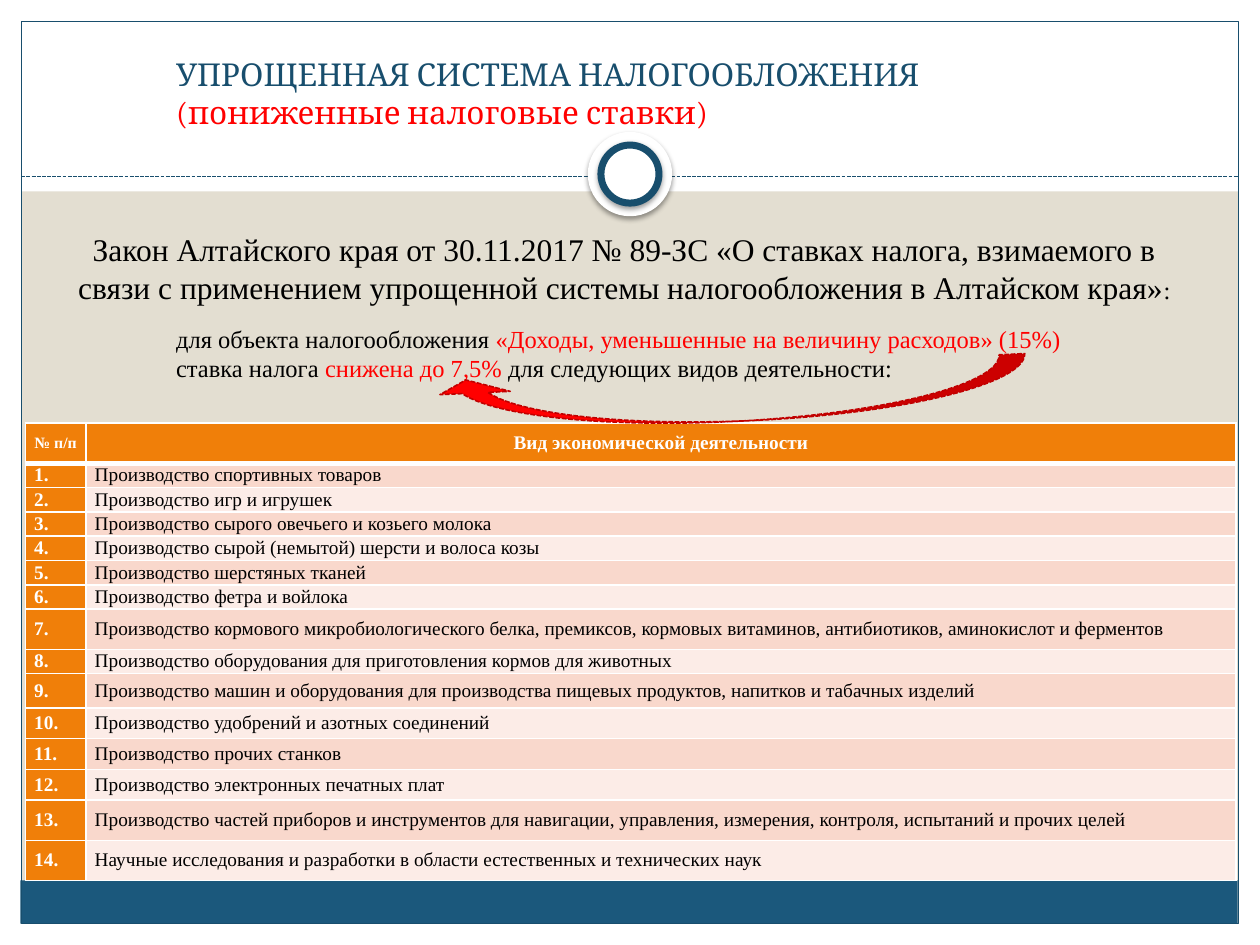
import pptx
import pptx.util
import pptx.dml.color
import pptx.enum.dml
import pptx.enum.shapes
import pptx.enum.text
import pptx.oxml
import pptx.oxml.ns

Cm, Pt = pptx.util.Cm, pptx.util.Pt
KIND = pptx.enum.shapes.MSO_SHAPE
ALIGN = pptx.enum.text.PP_ALIGN
ANCHOR = pptx.enum.text.MSO_ANCHOR
DASH = pptx.enum.dml.MSO_LINE.SQUARE_DOT
RGB = pptx.dml.color.RGBColor.from_string
NS = pptx.oxml.ns.nsdecls("a")


class Theme:
    sand, white, black = "E3DED1", "FFFFFF", "000000"
    navy, foot = "184E6D", "1B587C"
    red, rim = "FF0000", "C00000"
    orange, bands = "F07F09", ("F9D8CC", "FCECE7")
    serif, roman = "Cambria", "Times New Roman"
    big, mid, cell, small = 18, 14, 11, 9


def shape(kind, box, fill=None, line=None, width=0.75):
    item = slide.shapes.add_shape(kind, *map(Cm, box))
    item.shadow.inherit = False
    if fill:
        item.fill.solid()
        item.fill.fore_color.rgb = RGB(fill)
    else:
        item.fill.background()
    if line:
        item.line.color.rgb = RGB(line)
        item.line.width = Pt(width)
    else:
        item.line.fill.background()
    return item


def write(frame, lines, font, align=ALIGN.LEFT, bold=False):
    """Fill a text frame; each line is a list of (text, size, colour) runs."""
    frame.word_wrap = True
    for i, line in enumerate(lines):
        para = frame.add_paragraph() if i else frame.paragraphs[0]
        para.alignment = align
        for text, size, tint in line:
            run = para.add_run()
            run.text = text
            run.font.name, run.font.size, run.font.bold = font, Pt(size), bold
            run.font.color.rgb = RGB(tint)


deck = pptx.Presentation()
deck.slide_width, deck.slide_height = Cm(25.4), Cm(19.05)
slide = deck.slides.add_slide(deck.slide_layouts[6])
slide.background.fill.solid()
slide.background.fill.fore_color.rgb = RGB(Theme.sand)

# White margins, footer band and frame
for box in ((0, 18.62, 25.4, 0.43), (0, 0, 25.4, 3.86),
            (0, 0, 0.43, 19.05), (24.97, 0, 0.43, 19.05)):
    shape(KIND.RECTANGLE, box, Theme.white)
shape(KIND.RECTANGLE, (0.41, 17.75, 24.54, 0.87), Theme.foot)
shape(KIND.RECTANGLE, (0.43, 0.43, 24.54, 18.19), line=Theme.navy)

rule = slide.shapes.add_connector(
    pptx.enum.shapes.MSO_CONNECTOR.STRAIGHT, Cm(0.43), Cm(3.56), Cm(24.97), Cm(3.56))
rule.line.color.rgb = RGB(Theme.navy)
rule.line.width = Pt(0.75)
rule.line.dash_style = DASH
rule._element.spPr.append(pptx.oxml.parse_xml(f"<a:effectLst {NS}/>"))

# Ring on the rule
for size, edge in ((1.7, None), (1.17, Theme.navy)):
    disc = shape(KIND.OVAL, (12.7 - size / 2, 3.51 - size / 2, size, size),
                 Theme.white, edge, 4)
    glow = disc._element.spPr.find(pptx.oxml.ns.qn("a:effectLst"))
    glow.append(pptx.oxml.parse_xml(
        f'<a:outerShdw {NS} blurRad="{Pt(3.1)}" dist="{Pt(1.6)}" dir="5400000">'
        f'<a:srgbClr val="{Theme.black}"><a:alpha val="38000"/></a:srgbClr>'
        '</a:outerShdw>'))

# Title and introduction
title = slide.shapes.add_textbox(Cm(3.3), Cm(0.91), Cm(21), Cm(2.21)).text_frame
title.margin_top = Cm(0.2)
write(title, [
    [("УПРОЩЕННАЯ СИСТЕМА НАЛОГООБЛОЖЕНИЯ", Theme.big, Theme.navy)],
    [("(пониженные налоговые ставки)", Theme.big, Theme.red)],
], Theme.serif)

law = slide.shapes.add_textbox(Cm(0.89), Cm(4.52), Cm(23.39), Cm(1.8))
write(law.text_frame, [[
    ("Закон Алтайского края от 30.11.2017 № 89-ЗС «О ставках налога, взимаемого в "
     "связи с применением упрощенной системы налогообложения в Алтайском края»",
     Theme.big, Theme.black),
    (":", Theme.mid, Theme.black),
]], Theme.roman, ALIGN.CENTER)

rate = slide.shapes.add_textbox(Cm(3.3), Cm(6.4), Cm(19.81), Cm(1.45))
write(rate.text_frame, [
    [("для объекта налогообложения ", Theme.mid, Theme.black),
     ("«Доходы, уменьшенные на величину расходов» (15%)", Theme.mid, Theme.red)],
    [("ставка налога ", Theme.mid, Theme.black),
     ("снижена до 7,5%", Theme.mid, Theme.red),
     (" для следующих видов деятельности:", Theme.mid, Theme.black)],
], Theme.roman)

# Table of activities with row heights
head = 0.81
works = [
    ("Производство спортивных товаров", 0.49),
    ("Производство игр и игрушек", 0.49),
    ("Производство сырого овечьего и козьего молока", 0.49),
    ("Производство сырой (немытой) шерсти и волоса козы", 0.49),
    ("Производство шерстяных тканей", 0.49),
    ("Производство фетра и войлока", 0.49),
    ("Производство кормового микробиологического белка, премиксов, кормовых "
     "витаминов, антибиотиков, аминокислот и ферментов", 0.81),
    ("Производство оборудования для приготовления кормов для животных", 0.49),
    ("Производство машин и оборудования для производства пищевых продуктов, "
     "напитков и табачных изделий", 0.69),
    ("Производство удобрений и азотных соединений", 0.62),
    ("Производство прочих станков", 0.62),
    ("Производство электронных печатных плат", 0.62),
    ("Производство частей приборов и инструментов для навигации, управления, "
     "измерения, контроля, испытаний и прочих целей", 0.81),
    ("Научные исследования и разработки в области естественных и технических наук",
     0.81),
]
rows = [("№ п/п", "Вид экономической деятельности", head)]
rows += [(f"{n}.", work, tall) for n, (work, tall) in enumerate(works, 1)]
table = slide.shapes.add_table(
    len(rows), 2, Cm(0.51), Cm(8.53), Cm(24.41), Cm(sum(r[2] for r in rows))).table
table.columns[0].width, table.columns[1].width = Cm(1.22), Cm(23.19)

for r, (*texts, tall) in enumerate(rows):
    table.rows[r].height = Cm(tall)
    for c, text in enumerate(texts):
        cell = table.cell(r, c)
        cell.margin_left = cell.margin_right = Cm(0.18)
        cell.margin_top = cell.margin_bottom = 0
        cell.vertical_anchor = ANCHOR.MIDDLE
        props = cell._tc.get_or_add_tcPr()
        for side in "LRTB":
            thick = 3 if (r, side) in ((0, "B"), (1, "T")) else 1
            props.append(pptx.oxml.parse_xml(
                f'<a:ln{side} {NS} w="{Pt(thick)}"><a:solidFill>'
                f'<a:srgbClr val="{Theme.white}"/></a:solidFill></a:ln{side}>'))
        body = r > 0 and c > 0
        cell.fill.solid()
        cell.fill.fore_color.rgb = RGB(Theme.bands[(r - 1) % 2] if body else Theme.orange)
        size = Theme.cell if r or c else Theme.small
        write(cell.text_frame, [[(text, size, Theme.black if body else Theme.white)]],
              Theme.roman, ALIGN.LEFT if r else ALIGN.CENTER, not body)

# Arrow from the full rate to the reduced one
arrow = shape(KIND.CURVED_LEFT_ARROW, (14.15, 1.96, 1.09, 11.99),
              Theme.red, Theme.rim, 0.9)
arrow.line.dash_style = DASH
arrow.rotation = 87.3
for i, value in enumerate((0.475, 1.301, 0.25)):
    arrow.adjustments[i] = value

deck.save("out.pptx")
